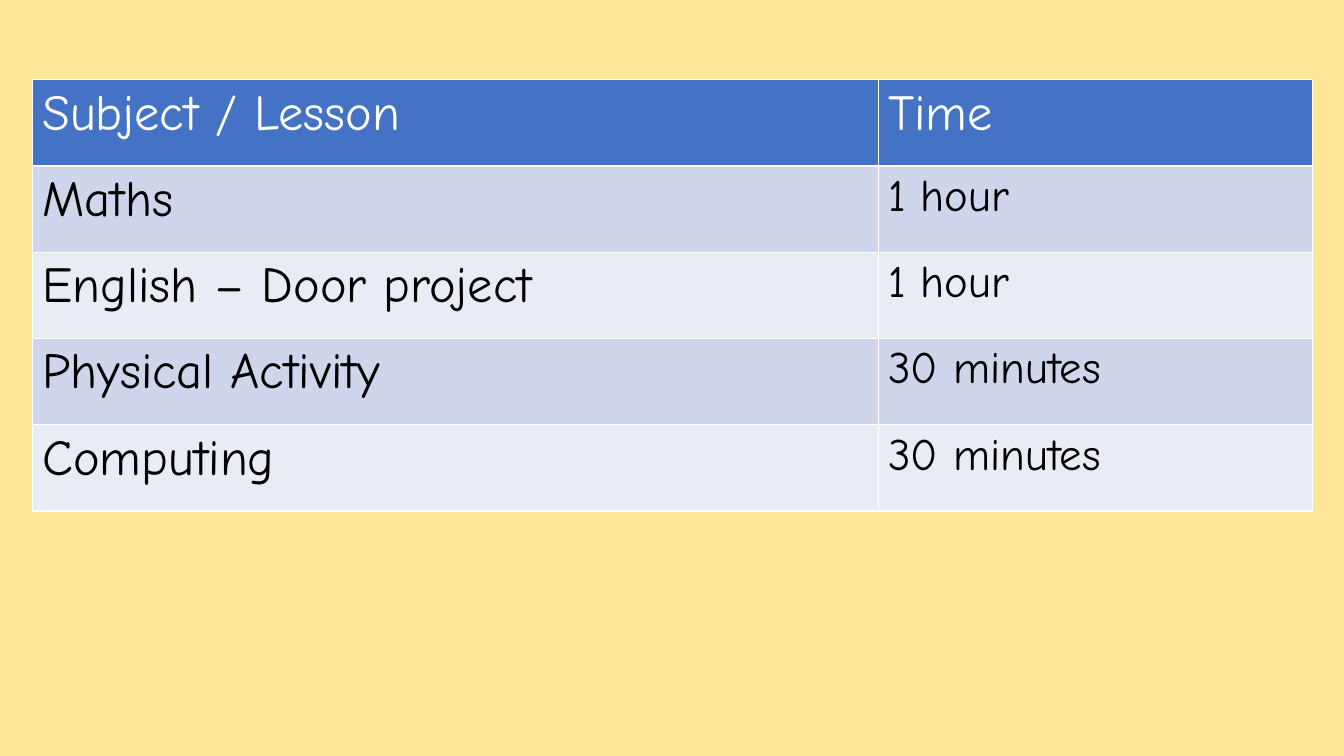
from pptx import Presentation
from pptx.dml.color import RGBColor
from pptx.util import Inches, Pt

COLORS = {
    "background": "FFE699",
    "header": "4472C4",
    "odd": "CFD5EA",
    "even": "E9EBF5",
    "white": "FFFFFF",
    "black": "000000",
}
FONT = "Comic Neue"
LESSONS = [
    ("Subject / Lesson", "Time"),
    ("Maths", "1 hour"),
    ("English – Door project", "1 hour"),
    ("Physical Activity", "30 minutes"),
    ("Computing", "30 minutes"),
]


def write_cell(cell, text, *, size, color, fill):
    cell.fill.solid()
    cell.fill.fore_color.rgb = RGBColor.from_string(COLORS[fill])
    span = cell.text_frame.paragraphs[0].add_run()
    span.text = text
    span.font.name = FONT
    span.font.size = Pt(size)
    span.font.bold = False
    span.font.color.rgb = RGBColor.from_string(COLORS[color])


deck = Presentation()
deck.slide_width = Inches(13.33)
deck.slide_height = Inches(7.5)
page = deck.slides.add_slide(deck.slide_layouts[6])
page.background.fill.solid()
page.background.fill.fore_color.rgb = RGBColor.from_string(COLORS["background"])

timetable = page.shapes.add_table(
    len(LESSONS), 2, Inches(0.32), Inches(0.79), Inches(12.7), Inches(4.28)
).table
timetable.columns[0].width = Inches(8.39)
timetable.columns[1].width = Inches(4.31)

for row, lesson in enumerate(LESSONS):
    is_header = row == 0
    fill = "header" if is_header else "odd" if row % 2 else "even"
    color = "white" if is_header else "black"
    for column, text in enumerate(lesson):
        size = 36 if is_header or column == 0 else 32
        write_cell(timetable.cell(row, column), text, size=size, color=color, fill=fill)

deck.save("out.pptx")
